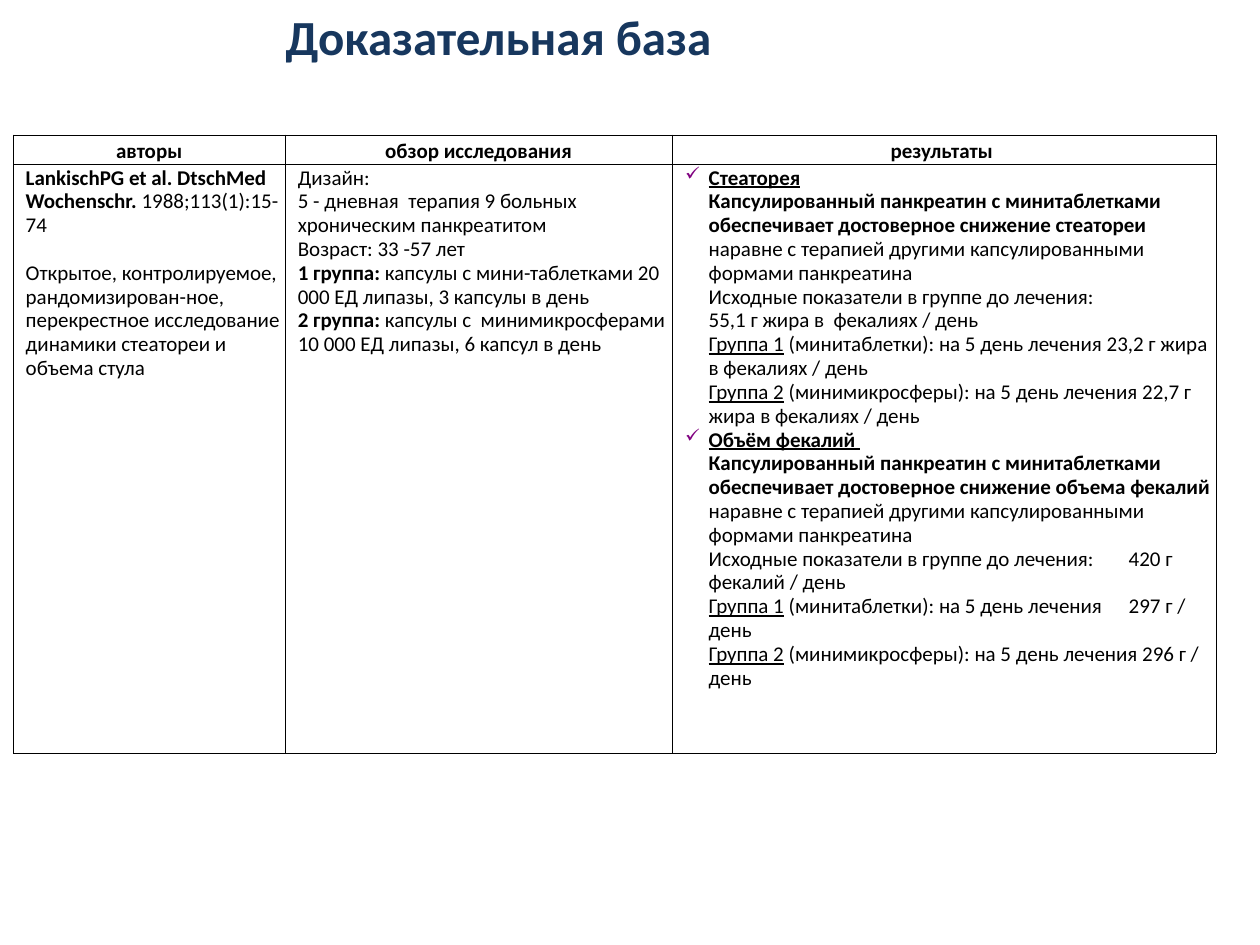
from typing import NamedTuple

from lxml.etree import SubElement
from pptx import Presentation
from pptx.dml.color import RGBColor
from pptx.enum.text import MSO_ANCHOR, MSO_AUTO_SIZE, PP_ALIGN
from pptx.oxml.ns import qn
from pptx.util import Pt

COLORS = {"title": "17375E", "text": "000000", "check": "800080", "paper": "FFFFFF"}
FONT = "Calibri"
TEXT_SIZE = 12
LINE_SPACING = 0.93
COLUMN_WIDTHS = (155.5, 221, 311)
ROW_HEIGHTS = (16.5, 337)
TAB_STOPS = (240, 261)


class Span(NamedTuple):
    text: str
    bold: bool = False
    underline: bool = False


class Block(NamedTuple):
    spans: list[Span]
    indent: float = 7.2
    hanging: float = 0
    space_before: float = 0
    checked: bool = False
    centered: bool = False


def color(name: str) -> RGBColor:
    return RGBColor.from_string(COLORS[name])


def apply(target, formats: dict) -> None:
    for name, value in formats.items():
        setattr(target, name, value)


def format_font(font, size: float, color_name: str, bold: bool, underline: bool = False) -> None:
    apply(font, {"name": FONT, "size": Pt(size), "bold": bold, "underline": underline})
    font.color.rgb = color(color_name)


def header(text: str) -> Block:
    return Block([Span(text, bold=True)], indent=0, centered=True)


def result(heading: str, claim: str, baseline: str, first: str, second: str) -> Block:
    """One checked finding: heading, claim, baseline and both groups."""
    return Block([
        Span(f"{heading}\n", bold=True, underline=True),
        Span(f"Капсулированный панкреатин с минитаблетками обеспечивает достоверное снижение {claim} ",
             bold=True),
        Span("наравне с терапией другими капсулированными формами панкреатина \n"
             f"Исходные показатели в группе до лечения:{baseline} / день\n"),
        Span("Группа 1", underline=True),
        Span(f" (минитаблетки): на 5 день лечения{first} / день\n"),
        Span("Группа 2", underline=True),
        Span(f" (минимикросферы): на 5 день лечения {second} / день"),
    ], indent=21, hanging=13.5, checked=True)


def add_bullet_and_tabs(properties) -> None:
    bullet_color = SubElement(properties, qn("a:buClr"))
    SubElement(bullet_color, qn("a:srgbClr"), val=COLORS["check"])
    SubElement(properties, qn("a:buSzPct"), val="90000")
    SubElement(properties, qn("a:buChar"), char="✓")
    tabs = SubElement(properties, qn("a:tabLst"))
    for stop in TAB_STOPS:
        SubElement(tabs, qn("a:tab"), pos=str(Pt(stop)), algn="l")


def write_block(paragraph, block: Block) -> None:
    properties = paragraph._p.get_or_add_pPr()
    properties.set("marL", str(Pt(block.indent)))
    properties.set("indent", str(Pt(-block.hanging)))
    if block.checked:
        add_bullet_and_tabs(properties)
    apply(paragraph, {
        "line_spacing": LINE_SPACING,
        "alignment": PP_ALIGN.CENTER if block.centered else PP_ALIGN.LEFT,
    })
    if block.space_before:
        paragraph.space_before = Pt(block.space_before)
    for span in block.spans:
        for index, line in enumerate(span.text.split("\n")):
            if index:
                paragraph.add_line_break()
            if line:
                run = paragraph.add_run()
                run.text = line
                format_font(run.font, TEXT_SIZE, "text", span.bold, span.underline)
    # Line breaks carry the text size too
    for line_break in paragraph._p.findall(qn("a:br")):
        SubElement(line_break, qn("a:rPr"), sz=str(TEXT_SIZE * 100))


def add_borders(cell) -> None:
    properties = cell._tc.get_or_add_tcPr()
    for side in ("lnL", "lnR", "lnT", "lnB"):
        line = SubElement(properties, qn(f"a:{side}"), w=str(Pt(0.11)))
        fill = SubElement(line, qn("a:solidFill"))
        SubElement(fill, qn("a:srgbClr"), val=COLORS["text"])


def fill_cell(cell, blocks: list[Block], anchor: MSO_ANCHOR) -> None:
    apply(cell, {"margin_left": 0, "margin_right": 0, "margin_bottom": 0,
                 "margin_top": Pt(1.4), "vertical_anchor": anchor})
    add_borders(cell)
    cell.fill.solid()
    cell.fill.fore_color.rgb = color("paper")
    frame = cell.text_frame
    for index, block in enumerate(blocks):
        write_block(frame.add_paragraph() if index else frame.paragraphs[0], block)


HEADERS = [[header(text)] for text in ("авторы", "обзор исследования", "результаты ")]
STUDY = [
    [
        Block([Span("LankischPG et al. DtschMed Wochenschr. ", bold=True),
               Span("1988;113(1):15-74")]),
        Block([Span("Открытое, контролируемое, рандомизирован-ное, перекрестное исследование "
                    "динамики стеатореи и объема стула")], space_before=13.6),
    ],
    [
        Block([
            Span("Дизайн: \n5 - дневная  терапия 9 больных хроническим панкреатитом \n"
                 "Возраст: 33 -57 лет\n"),
            Span("1 группа: ", bold=True),
            Span("капсулы с мини-таблетками 20 000 ЕД липазы, 3 капсулы в день\n"),
            Span("2 группа: ", bold=True),
            Span("капсулы с  минимикросферами 10 000 ЕД липазы, 6 капсул в день"),
        ]),
    ],
    [
        result("Стеаторея", "стеатореи", "\n55,1 г жира в  фекалиях",
               " 23,2 г жира в фекалиях", "22,7 г жира в фекалиях"),
        result("Объём фекалий ", "объема фекалий", "\t420 г фекалий", "\t297 г", "296 г"),
    ],
]


def add_title(slide) -> None:
    title = slide.shapes.title
    apply(title, {"left": Pt(156), "top": Pt(0), "width": Pt(261), "height": Pt(41)})
    frame = title.text_frame
    apply(frame, {"word_wrap": False, "auto_size": MSO_AUTO_SIZE.NONE,
                  "vertical_anchor": MSO_ANCHOR.TOP})
    paragraph = frame.paragraphs[0]
    paragraph.alignment = PP_ALIGN.LEFT
    run = paragraph.add_run()
    run.text = "Доказательная база"
    format_font(run.font, 28, "title", bold=True)


def add_study_table(slide) -> None:
    table = slide.shapes.add_table(
        len(ROW_HEIGHTS), len(COLUMN_WIDTHS), Pt(7.5), Pt(77),
        Pt(sum(COLUMN_WIDTHS)), Pt(sum(ROW_HEIGHTS))).table
    apply(table, {"first_row": False, "horz_banding": False})
    for column, width in zip(table.columns, COLUMN_WIDTHS):
        column.width = Pt(width)
    for row, height in zip(table.rows, ROW_HEIGHTS):
        row.height = Pt(height)
    anchors = (MSO_ANCHOR.BOTTOM, MSO_ANCHOR.TOP)
    for row, contents, anchor in zip(table.rows, (HEADERS, STUDY), anchors):
        for cell, blocks in zip(row.cells, contents):
            fill_cell(cell, blocks, anchor)


def main() -> None:
    presentation = Presentation()
    apply(presentation, {"slide_width": Pt(720), "slide_height": Pt(540)})
    slide = presentation.slides.add_slide(presentation.slide_layouts[5])
    add_title(slide)
    add_study_table(slide)
    presentation.save("out.pptx")


if __name__ == "__main__":
    main()
